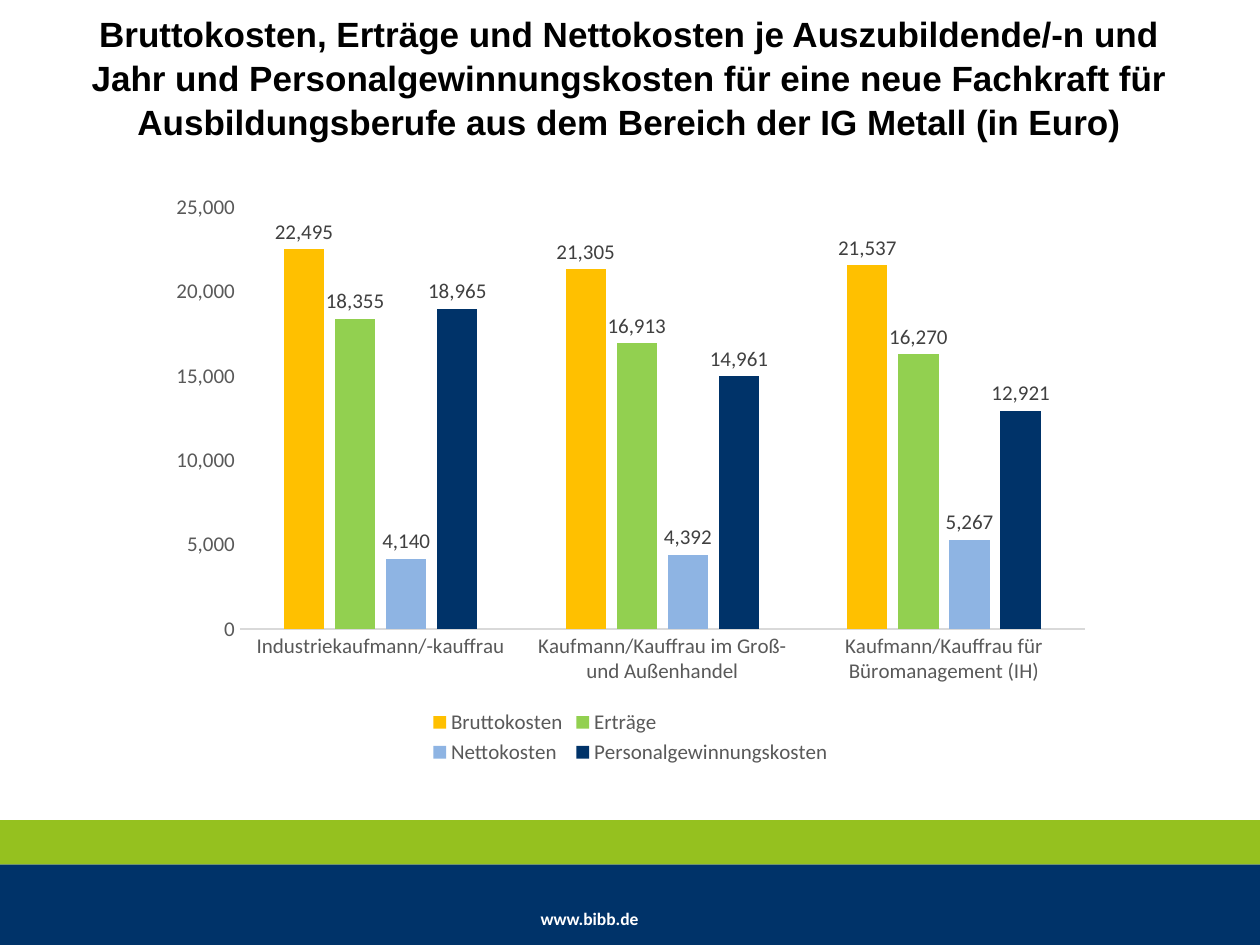
from dataclasses import dataclass

from pptx import Presentation
from pptx.chart.data import CategoryChartData
from pptx.dml.color import RGBColor
from pptx.enum.chart import (XL_CHART_TYPE as ChartType, XL_LABEL_POSITION as LabelPos,
                             XL_LEGEND_POSITION as LegendPos, XL_TICK_MARK as Tick)
from pptx.enum.shapes import MSO_SHAPE as Shape
from pptx.enum.text import PP_ALIGN as Align
from pptx.util import Inches, Pt


@dataclass(frozen=True)
class Theme:
    navy: str = "003369"
    green: str = "95C11F"
    white: str = "FFFFFF"
    black: str = "000000"
    axis_text: str = "595959"
    label_text: str = "404040"
    axis_line: str = "D9D9D9"
    heading_font: str = "Arial"
    body_font: str = "Calibri"
    title_size: int = 20
    chart_size: int = 12
    footer_size: int = 10


@dataclass(frozen=True)
class Box:
    left: float
    top: float
    width: float
    height: float

    def emu(self) -> tuple:
        return tuple(Inches(v) for v in (self.left, self.top, self.width, self.height))


@dataclass(frozen=True)
class Series:
    name: str
    color: str
    values: tuple


THEME = Theme()
TITLE = ("Bruttokosten, Erträge und Nettokosten je Auszubildende/-n und Jahr und "
         "Personalgewinnungskosten für eine neue Fachkraft für Ausbildungsberufe "
         "aus dem Bereich der IG Metall (in Euro)")
OCCUPATIONS = ("Industriekaufmann/-kauffrau",
               "Kaufmann/Kauffrau im Groß- und Außenhandel",
               "Kaufmann/Kauffrau für Büromanagement (IH)")
COSTS = (
    Series("Bruttokosten", "FFC000", (22495, 21305, 21537)),
    Series("Erträge", "92D050", (18355, 16913, 16270)),
    Series("Nettokosten", "8EB4E3", (4140, 4392, 5267)),
    Series("Personalgewinnungskosten", THEME.navy, (18965, 14961, 12921)),
)
NUMBER_FORMAT = "#,##0"


def set_attrs(obj, values: dict) -> None:
    for name, value in values.items():
        setattr(obj, name, value)


def set_font(font, size: int, color: str, name: str, bold: bool = False) -> None:
    set_attrs(font, {"size": Pt(size), "name": name, "bold": bold})
    font.color.rgb = RGBColor.from_string(color)


def add_band(s, box: Box, color: str) -> None:
    sp = s.shapes.add_shape(Shape.RECTANGLE, *box.emu())
    sp.shadow.inherit = False
    sp.fill.solid()
    sp.fill.fore_color.rgb = RGBColor.from_string(color)
    sp.line.fill.background()


def add_text(s, box: Box, text: str, size: int, color: str, font: str,
             align: Align, inset: tuple, spacing: float = 1.0) -> None:
    tf = s.shapes.add_textbox(*box.emu()).text_frame
    dx, dy = (Inches(v) for v in inset)
    set_attrs(tf, {"word_wrap": True, "margin_left": dx, "margin_right": dx,
                   "margin_top": dy, "margin_bottom": dy})
    p = tf.paragraphs[0]
    set_attrs(p, {"alignment": align, "line_spacing": spacing})
    r = p.add_run()
    r.text = text
    set_font(r.font, size, color, font, bold=True)


def add_cost_chart(s, box: Box) -> None:
    data = CategoryChartData(number_format=NUMBER_FORMAT)
    data.categories = OCCUPATIONS
    for item in COSTS:
        data.add_series(item.name, item.values)
    chart = s.shapes.add_chart(ChartType.COLUMN_CLUSTERED, *box.emu(), data).chart
    set_attrs(chart, {"has_title": False, "has_legend": True})
    set_font(chart.font, 10, THEME.black, THEME.body_font)

    # Legend
    set_attrs(chart.legend, {"position": LegendPos.BOTTOM, "include_in_layout": False})
    set_font(chart.legend.font, THEME.chart_size, THEME.axis_text, THEME.body_font)

    # Axes
    for axis in (chart.category_axis, chart.value_axis):
        set_attrs(axis, {"major_tick_mark": Tick.NONE, "minor_tick_mark": Tick.NONE,
                         "has_major_gridlines": False})
        set_font(axis.tick_labels.font, THEME.chart_size, THEME.axis_text, THEME.body_font)
    line = chart.category_axis.format.line
    line.color.rgb = RGBColor.from_string(THEME.axis_line)
    line.width = Pt(0.75)
    value_axis = chart.value_axis
    set_attrs(value_axis, {"minimum_scale": 0, "maximum_scale": 25000, "major_unit": 5000})
    set_attrs(value_axis.tick_labels, {"number_format": NUMBER_FORMAT,
                                       "number_format_is_linked": False})
    value_axis.format.line.fill.background()

    # Columns and their values
    plot = chart.plots[0]
    set_attrs(plot, {"gap_width": 219, "overlap": -27, "vary_by_categories": False})
    for series, item in zip(plot.series, COSTS):
        series.invert_if_negative = False
        series.format.fill.solid()
        series.format.fill.fore_color.rgb = RGBColor.from_string(item.color)
        labels = series.data_labels
        set_attrs(labels, {"show_value": True, "position": LabelPos.OUTSIDE_END,
                           "number_format": NUMBER_FORMAT,
                           "number_format_is_linked": False})
        set_font(labels.font, THEME.chart_size, THEME.label_text, THEME.body_font)


def main() -> None:
    prs = Presentation()
    set_attrs(prs, {"slide_width": Inches(10), "slide_height": Inches(7.5)})
    s = prs.slides.add_slide(prs.slide_layouts[6])

    # Footer
    add_band(s, Box(0, 6.86, 10, 0.64), THEME.navy)
    add_band(s, Box(0, 6.51, 10, 0.35), THEME.green)
    add_text(s, Box(4.29, 7.21, 1.02, 0.17), "www.bibb.de", THEME.footer_size,
             THEME.white, THEME.body_font, Align.LEFT, (0, 0))

    # Chart and title
    add_cost_chart(s, Box(1.25, 1.45, 7.51, 4.66))
    add_text(s, Box(0.47, 0.03, 9.05, 1.11), TITLE, THEME.title_size,
             THEME.black, THEME.heading_font, Align.CENTER, (0.1, 0.05), 1.05)
    prs.save("out.pptx")


if __name__ == "__main__":
    main()
